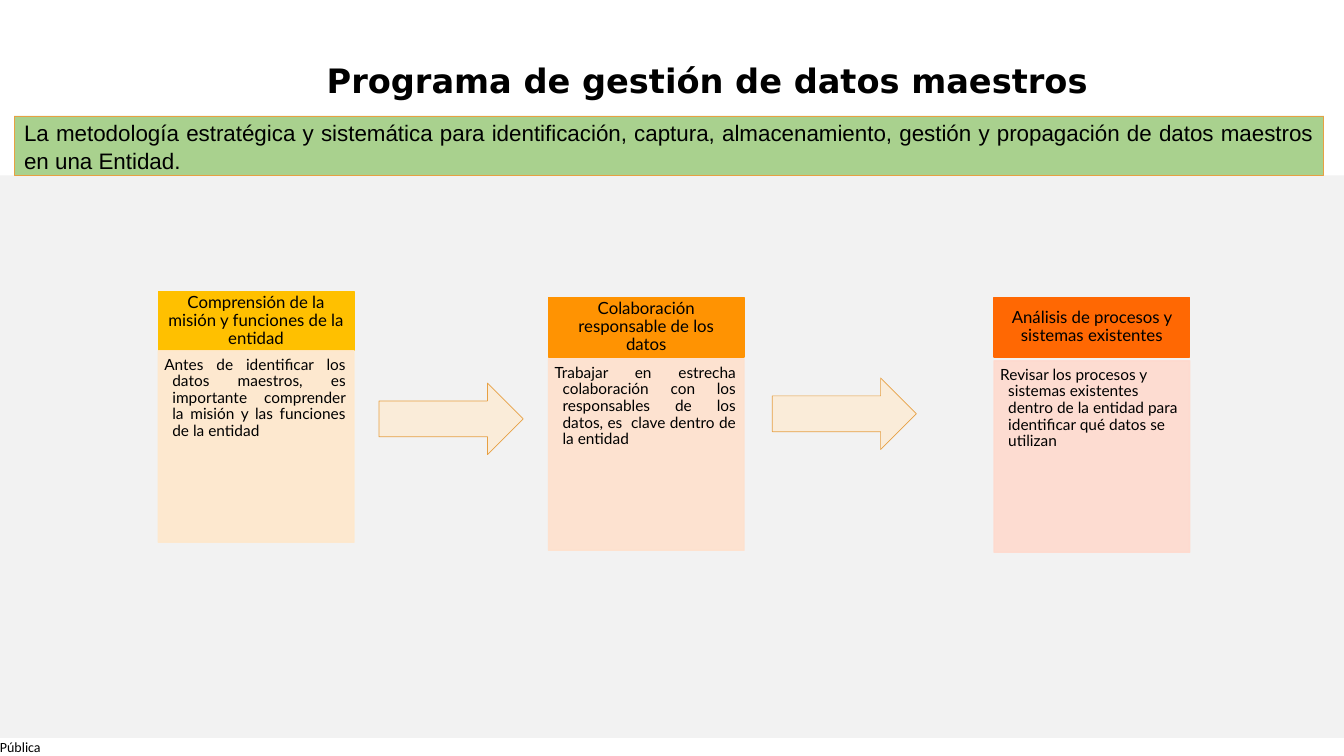
from dataclasses import dataclass
from typing import Optional

from lxml.etree import SubElement
from pptx import Presentation
from pptx.dml.color import RGBColor
from pptx.enum.shapes import MSO_SHAPE as Preset
from pptx.enum.text import MSO_ANCHOR as Anchor, MSO_AUTO_SIZE as AutoSize, PP_ALIGN as Align
from pptx.oxml.ns import qn
from pptx.util import Pt

EMU_PER_PX = 9144
COLORS = {
    "text": "000000",
    "backdrop": "F2F2F2",
    "definition": "A9D18E",
    "outline": "E7A043",
    "arrow": "FAECD9",
    "mission": "FFC000",
    "mission_tint": "FFE8CC",
    "collaboration": "FF9302",
    "collaboration_tint": "FFE1CD",
    "analysis": "FF6803",
    "analysis_tint": "FFDACE",
}


@dataclass(frozen=True)
class Box:
    left: int
    top: int
    width: int
    height: int


@dataclass(frozen=True)
class Style:
    font: str
    size: int
    align: Align = Align.LEFT
    anchor: Anchor = Anchor.TOP
    insets: tuple[int, int, int, int] = (10, 5, 10, 5)
    spacing: float = 1.0
    after: float = 0
    hanging: int = 0
    bold: bool = False


@dataclass(frozen=True)
class Step:
    left: int
    top: int
    detail_top: int
    color: str
    heading: str
    detail: str
    detail_align: Align = Align.JUSTIFY


STEP_WIDTH, HEADING_HEIGHT, DETAIL_HEIGHT = 194, 59, 190
DETAIL_INSETS = (6, 6, 8, 9)
ARROWS = [Box(376, 380, 143, 71), Box(766, 375, 143, 71)]
STEPS = [
    Step(157, 289, 348, "mission",
         "Comprensión de la misión y funciones de la entidad",
         "Antes de identificar los datos maestros, es importante comprender "
         "la misión y las funciones de la entidad"),
    Step(544, 295, 356, "collaboration",
         "Colaboración responsable de los datos",
         "Trabajar en estrecha colaboración con los responsables de los datos, "
         "es  clave dentro de la entidad"),
    Step(986, 295, 358, "analysis",
         "Análisis de procesos y sistemas existentes",
         "Revisar los procesos y sistemas existentes dentro de la entidad para "
         "identificar qué datos se utilizan", Align.LEFT),
]


def px(value: int) -> int:
    return value * EMU_PER_PX


def bounds(box: Box) -> tuple[int, int, int, int]:
    return px(box.left), px(box.top), px(box.width), px(box.height)


def rgb(color: str) -> RGBColor:
    return RGBColor.from_string(COLORS[color])


def write(shape, text: str, style: Style, wrap: bool = True) -> None:
    frame = shape.text_frame
    frame.auto_size = AutoSize.NONE
    frame.word_wrap = wrap
    frame.vertical_anchor = style.anchor
    (frame.margin_left, frame.margin_top,
     frame.margin_right, frame.margin_bottom) = map(px, style.insets)
    paragraph = frame.paragraphs[0]
    paragraph.alignment = style.align
    paragraph.line_spacing = style.spacing
    paragraph.space_before = Pt(0)
    paragraph.space_after = Pt(style.after)
    if style.hanging:
        properties = paragraph._p.get_or_add_pPr()
        properties.set("marL", str(px(style.hanging)))
        properties.set("indent", str(-px(style.hanging)))
    run = paragraph.add_run()
    run.text = text
    run.font.name = style.font
    run.font.size = Pt(style.size)
    run.font.bold = style.bold
    run.font.color.rgb = rgb("text")


def draw(slide, preset: Preset, box: Box, fill: str,
         outline: Optional[str] = None, weight: float = 0.5, opacity: int = 100):
    shape = slide.shapes.add_shape(preset, *bounds(box))
    shape.shadow.inherit = False
    shape.fill.solid()
    shape.fill.fore_color.rgb = rgb(fill)
    if outline:
        shape.line.color.rgb = rgb(outline)
        shape.line.width = Pt(weight)
    else:
        shape.line.fill.background()
    if opacity < 100:
        for color in shape._element.spPr.iter(qn("a:srgbClr")):
            SubElement(color, qn("a:alpha")).set("val", str(opacity * 1000))
    return shape


def draw_step(slide, step: Step) -> None:
    heading_box = Box(step.left, step.top, STEP_WIDTH, HEADING_HEIGHT)
    heading = draw(slide, Preset.RECTANGLE, heading_box, step.color, step.color, 1)
    write(heading, step.heading,
          Style("Lato", 12, Align.CENTER, Anchor.MIDDLE, (9, 5, 9, 5), 0.9))
    tint = f"{step.color}_tint"
    detail_box = Box(step.left, step.detail_top, STEP_WIDTH, DETAIL_HEIGHT)
    detail = draw(slide, Preset.RECTANGLE, detail_box, tint, tint, 1, 90)
    write(detail, step.detail,
          Style("Lato", 11, step.detail_align, Anchor.TOP, DETAIL_INSETS, 0.9, hanging=8))


def main() -> None:
    deck = Presentation()
    deck.slide_width, deck.slide_height = px(1333), px(750)
    slide = deck.slides.add_slide(deck.slide_layouts[5])

    title = slide.shapes.title
    title.left, title.top, title.width, title.height = bounds(Box(314, 54, 1000, 50))
    write(title, "Programa de gestión de datos maestros",
          Style("DejaVu Sans", 24, Align.JUSTIFY, Anchor.MIDDLE, bold=True))

    classification = slide.shapes.add_textbox(*bounds(Box(0, 733, 44, 17)))
    write(classification, "Pública", Style("Calibri", 10, insets=(0, 0, 0, 0)), wrap=False)

    draw(slide, Preset.RECTANGLE, Box(0, 174, 1333, 558), "backdrop")
    definition = draw(slide, Preset.RECTANGLE, Box(14, 115, 1299, 59), "definition", "outline")
    write(definition,
          "La metodología estratégica y sistemática para identificación, captura, "
          "almacenamiento, gestión y propagación de datos maestros en una Entidad.",
          Style("Arial", 16, Align.JUSTIFY, Anchor.MIDDLE, spacing=1.07, after=10.7))

    for arrow in ARROWS:
        draw(slide, Preset.RIGHT_ARROW, arrow, "arrow", "outline")
    for step in STEPS:
        draw_step(slide, step)

    deck.save("out.pptx")


if __name__ == "__main__":
    main()
